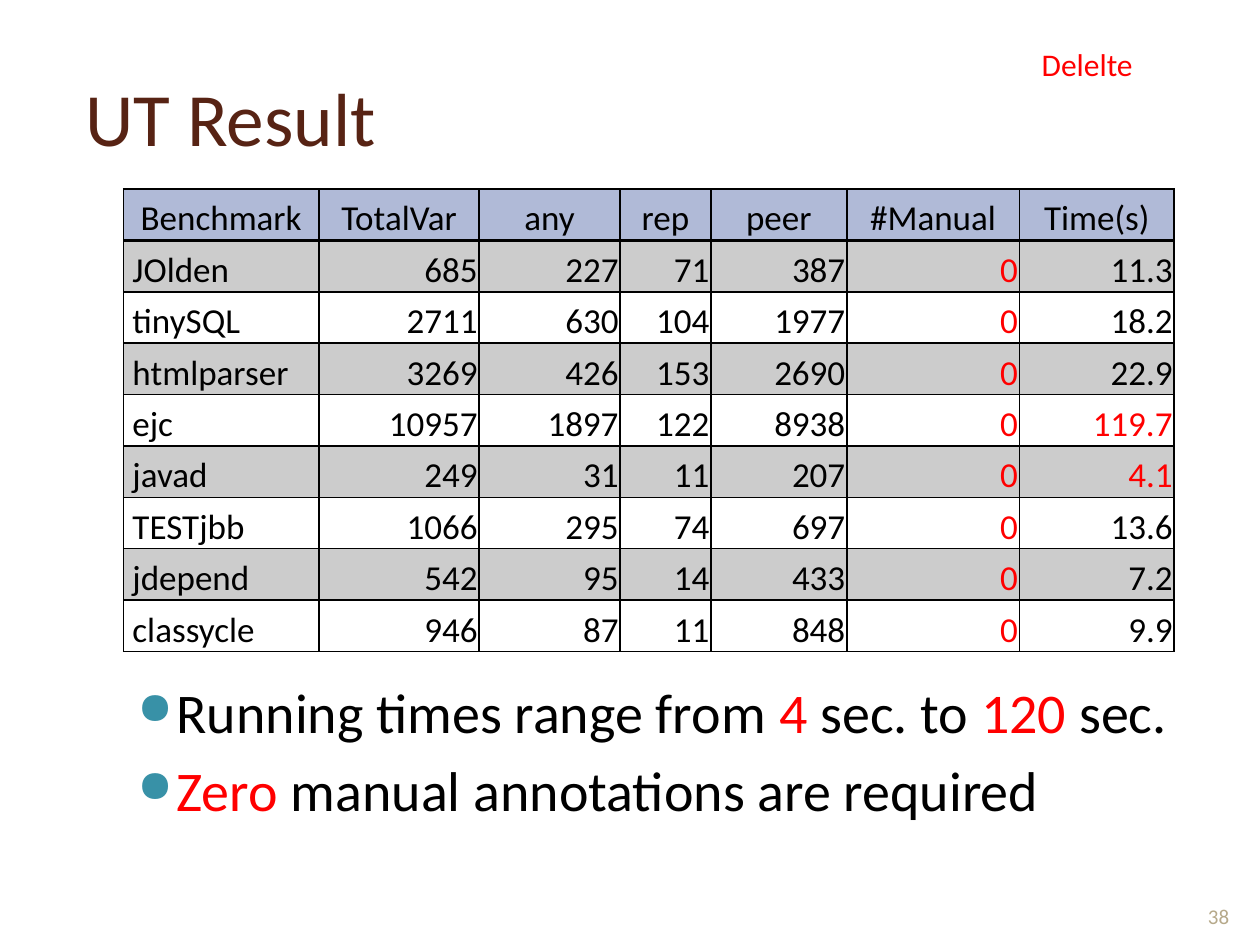
from dataclasses import dataclass

from pptx import Presentation
from pptx.dml.color import RGBColor
from pptx.enum.text import MSO_ANCHOR as Anchor, MSO_AUTO_SIZE as AutoSize, PP_ALIGN as Align
from pptx.oxml import parse_xml
from pptx.oxml.ns import nsdecls
from pptx.oxml.xmlchemy import OxmlElement
from pptx.util import Cm, Pt


@dataclass(frozen=True)
class Theme:
    font: str = "Calibri"
    title: str = "572314"
    ink: str = "000000"
    accent: str = "FF0000"
    header: str = "B0BAD7"
    bullet: str = "3891A7"
    muted: str = "B6A98A"
    title_size: int = 43
    body_size: int = 32
    table_size: int = 20
    note_size: int = 18
    number_size: int = 12


THEME = Theme()

HEADINGS = ["Benchmark", "TotalVar", "any", "rep", "peer", "#Manual", "Time(s)"]
RESULTS = [
    ["JOlden", "685", "227", "71", "387", "0", "11.3"],
    ["tinySQL", "2711", "630", "104", "1977", "0", "18.2"],
    ["htmlparser", "3269", "426", "153", "2690", "0", "22.9"],
    ["ejc", "10957", "1897", "122", "8938", "0", "119.7"],
    ["javad", "249", "31", "11", "207", "0", "4.1"],
    ["TESTjbb", "1066", "295", "74", "697", "0", "13.6"],
    ["jdepend", "542", "95", "14", "433", "0", "7.2"],
    ["classycle", "946", "87", "11", "848", "0", "9.9"],
]
COLUMN_WIDTHS = [3.94, 3.23, 2.84, 1.83, 2.74, 3.48, 3.12]
ROW_HEIGHT = 1.036
MANUAL_COLUMN = HEADINGS.index("#Manual")
EXTREME_TIMES = {"119.7", "4.1"}

# Each finding is a list of (text, is highlighted) spans
FINDINGS = [
    [("Running times range from ", False), ("4 ", True), ("sec. to ", False),
     ("120", True), (" sec.", False)],
    [("Zero ", True), ("manual annotations are required", False)],
]


def style_span(span, size, color):
    span.font.name = THEME.font
    span.font.size = Pt(size)
    span.font.color.rgb = RGBColor.from_string(color)


def add_box(page, left, top, width, height, anchor=Anchor.TOP, wrap=True):
    box = page.shapes.add_textbox(Cm(left), Cm(top), Cm(width), Cm(height))
    box.text_frame.word_wrap = wrap
    box.text_frame.vertical_anchor = anchor
    return box


def add_label(page, text, place, size, color, align=Align.LEFT, **options):
    box = add_box(page, *place, **options)
    box.text_frame.text = text
    para = box.text_frame.paragraphs[0]
    para.alignment = align
    style_span(para.runs[0], size, color)
    return box


def set_bullet(para):
    props = para._p.get_or_add_pPr()
    props.set("marL", str(Cm(1.02)))
    props.set("indent", str(Cm(-0.79)))
    for xml in (
        f'<a:buClr {nsdecls("a")}><a:srgbClr val="{THEME.bullet}"/></a:buClr>',
        f'<a:buSzPct {nsdecls("a")} val="80000"/>',
        f'<a:buChar {nsdecls("a")} char="●"/>',
    ):
        props.append(parse_xml(xml))


def add_findings(page):
    frame = add_box(page, 2.29, 13.53, 22.53, 4.2).text_frame
    for index, parts in enumerate(FINDINGS):
        para = frame.add_paragraph() if index else frame.paragraphs[0]
        para.space_before = Pt(6)
        set_bullet(para)
        for text, highlighted in parts:
            span = para.add_run()
            span.text = text
            style_span(span, THEME.body_size, THEME.accent if highlighted else THEME.ink)


def set_borders(cell, top=1, bottom=1):
    props = cell._tc.get_or_add_tcPr()
    sides = {"L": 1, "R": 1, "T": top, "B": bottom}
    for index, (side, width) in enumerate(sides.items()):
        props.insert(index, parse_xml(
            f'<a:ln{side} {nsdecls("a")} w="{Pt(width)}"><a:solidFill>'
            f'<a:srgbClr val="{THEME.ink}"/></a:solidFill></a:ln{side}>'))


def fill_cell(cell, row):
    if row and row % 2 == 0:
        cell.fill.background()
        return
    cell.fill.solid()
    cell.fill.fore_color.rgb = RGBColor.from_string(THEME.ink if row else THEME.header)
    if row:  # shaded rows are 20 % black
        alpha = OxmlElement("a:alpha")
        alpha.set("val", "20000")
        cell._tc.tcPr.find(".//{*}srgbClr").append(alpha)


def format_cell(cell, text, row, column):
    cell.text_frame.text = text
    cell.vertical_anchor = Anchor.BOTTOM
    cell.margin_left = Cm(0.18 if row and column == 0 else 0.03)
    cell.margin_right = cell.margin_top = Cm(0.03)
    cell.margin_bottom = 0
    para = cell.text_frame.paragraphs[0]
    if row == 0:
        para.alignment = Align.CENTER
    else:
        para.alignment = Align.RIGHT if column else Align.LEFT
    marked = row and (column == MANUAL_COLUMN or text in EXTREME_TIMES)
    style_span(para.runs[0], THEME.table_size, THEME.accent if marked else THEME.ink)
    fill_cell(cell, row)
    set_borders(cell, top=2 if row == 1 else 1, bottom=2 if row == 0 else 1)


def add_results(page):
    rows = [HEADINGS] + RESULTS
    table = page.shapes.add_table(
        len(rows), len(HEADINGS), Cm(2.49), Cm(3.81),
        Cm(sum(COLUMN_WIDTHS)), Cm(ROW_HEIGHT * len(rows))).table
    for column, width in zip(table.columns, COLUMN_WIDTHS):
        column.width = Cm(width)
    for row, texts in enumerate(rows):
        table.rows[row].height = Cm(ROW_HEIGHT)
        for column, text in enumerate(texts):
            format_cell(table.cell(row, column), text, row, column)


def main():
    deck = Presentation()
    deck.slide_width, deck.slide_height = Cm(25.4), Cm(19.05)
    page = deck.slides.add_slide(deck.slide_layouts[6])

    # Title
    add_label(page, "UT Result", (1.47, 0.76, 22.53, 3.18),
              THEME.title_size, THEME.title, anchor=Anchor.MIDDLE)

    # Results table and findings
    add_results(page)
    add_findings(page)

    # Review note
    note = add_label(page, "Delelte", (20.75, 0.79, 2.41, 1.02),
                     THEME.note_size, THEME.accent, wrap=False)
    note.text_frame.auto_size = AutoSize.SHAPE_TO_FIT_TEXT

    # Page number
    add_label(page, "38", (23.93, 17.53, 1.27, 1.32), THEME.number_size,
              THEME.muted, Align.CENTER, anchor=Anchor.BOTTOM)

    deck.save("out.pptx")


if __name__ == "__main__":
    main()
